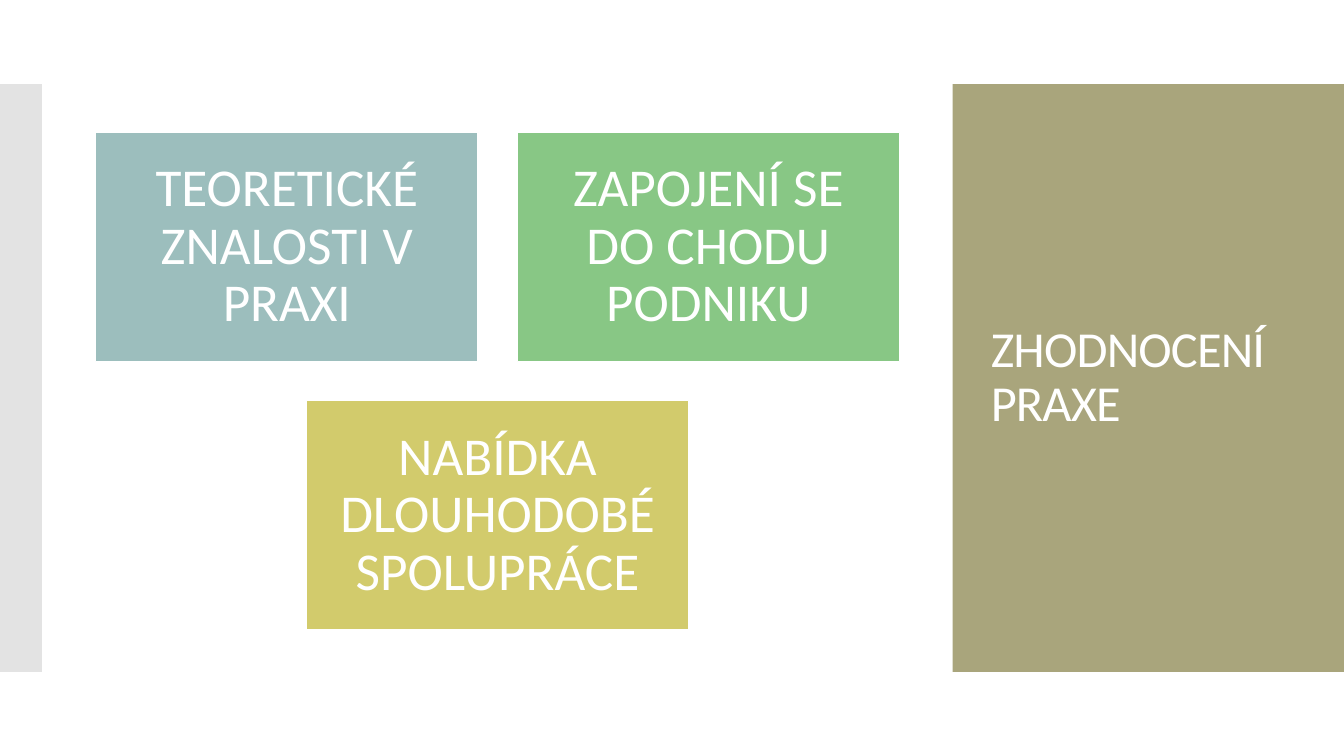
from lxml.etree import SubElement
from pptx import Presentation
from pptx.dml.color import RGBColor
from pptx.enum.shapes import MSO_SHAPE
from pptx.enum.text import MSO_ANCHOR, MSO_AUTO_SIZE, PP_ALIGN
from pptx.oxml.ns import qn
from pptx.util import Pt

SLIDE_WIDTH, SLIDE_HEIGHT = 960, 540
BAND_TOP, BAND_HEIGHT = 60, 420
WHITE, OLIVE, GREY = "FFFFFF", "A9A57C", "C8C8C8"
CARDS = [
    ("TEORETICKÉ ZNALOSTI V PRAXI", "9CBEBD"),
    ("ZAPOJENÍ SE DO CHODU PODNIKU", "88C785"),
    ("NABÍDKA DLOUHODOBÉ SPOLUPRÁCE", "D2CB6C"),
]
FRAME_FORMAT = {
    "word_wrap": True,
    "auto_size": MSO_AUTO_SIZE.NONE,
    "vertical_anchor": MSO_ANCHOR.MIDDLE,
}
CARD_MARGINS = {f"margin_{side}": Pt(11.4) for side in ("left", "top", "right", "bottom")}


def colour(value):
    return RGBColor.from_string(value)


def apply(target, values):
    for name, value in values.items():
        setattr(target, name, value)


def add_block(slide, box, fill):
    block = slide.shapes.add_shape(MSO_SHAPE.RECTANGLE, *map(Pt, box))
    block.shadow.inherit = False
    block.fill.solid()
    block.fill.fore_color.rgb = colour(fill)
    block.line.fill.background()
    return block


def write(frame, text, size, align, frame_format):
    apply(frame, frame_format)
    frame.text = text
    paragraph = frame.paragraphs[0]
    apply(paragraph, {"alignment": align, "line_spacing": 0.9})
    for run in paragraph.runs:
        apply(run.font, {"name": "Calibri", "size": Pt(size)})
        run.font.color.rgb = colour(WHITE)
    return paragraph


def add_side_strip(slide, box):
    strip = add_block(slide, box, GREY)
    fill_colour = strip.fill._xPr.find(qn("a:solidFill"))[0]
    SubElement(fill_colour, qn("a:alpha"), val="50000")


def add_title_panel(slide, box):
    left, top, width, height = box
    panel = add_block(slide, box, OLIVE)
    title = slide.shapes.title
    panel._element.addnext(title._element)
    apply(title, {
        "left": Pt(left + 20),
        "top": Pt(top + 29),
        "width": Pt(width - 48),
        "height": Pt(height - 58),
    })
    heading = write(title.text_frame, "ZHODNOCENÍ\vPRAXE", 36, PP_ALIGN.LEFT, FRAME_FORMAT)
    for run in heading.runs:
        run.font._element.set("spc", "-60")
    for line_break in heading._p.findall(qn("a:br")):
        SubElement(line_break, qn("a:rPr"), sz="3600")


def add_cards(slide, box):
    left, top, width, height = box
    columns, gap = 2, 28
    card_width = (width - gap) / columns
    card_height = (height - gap) / 2
    for index, (text, fill) in enumerate(CARDS):
        row, column = divmod(index, columns)
        row_count = min(columns, len(CARDS) - row * columns)
        row_width = row_count * card_width + (row_count - 1) * gap
        card_left = left + (width - row_width) / 2 + column * (card_width + gap)
        card_top = top + row * (card_height + gap)
        card = add_block(slide, (card_left, card_top, card_width, card_height), fill)
        card.line.color.rgb = colour(WHITE)
        card.line.width = Pt(0.85)
        write(card.text_frame, text, 38, PP_ALIGN.CENTER, FRAME_FORMAT | CARD_MARGINS)


def main():
    deck = Presentation()
    apply(deck, {"slide_width": Pt(SLIDE_WIDTH), "slide_height": Pt(SLIDE_HEIGHT)})
    slide = deck.slides.add_slide(deck.slide_layouts[5])
    slide.background.fill.solid()
    slide.background.fill.fore_color.rgb = colour(WHITE)
    add_title_panel(slide, (680.5, BAND_TOP, SLIDE_WIDTH - 680.5, BAND_HEIGHT))
    add_side_strip(slide, (0, BAND_TOP, 30, BAND_HEIGHT))
    add_cards(slide, (68.4, 94.5, 574.2, 355.5))
    deck.save("out.pptx")


if __name__ == "__main__":
    main()
